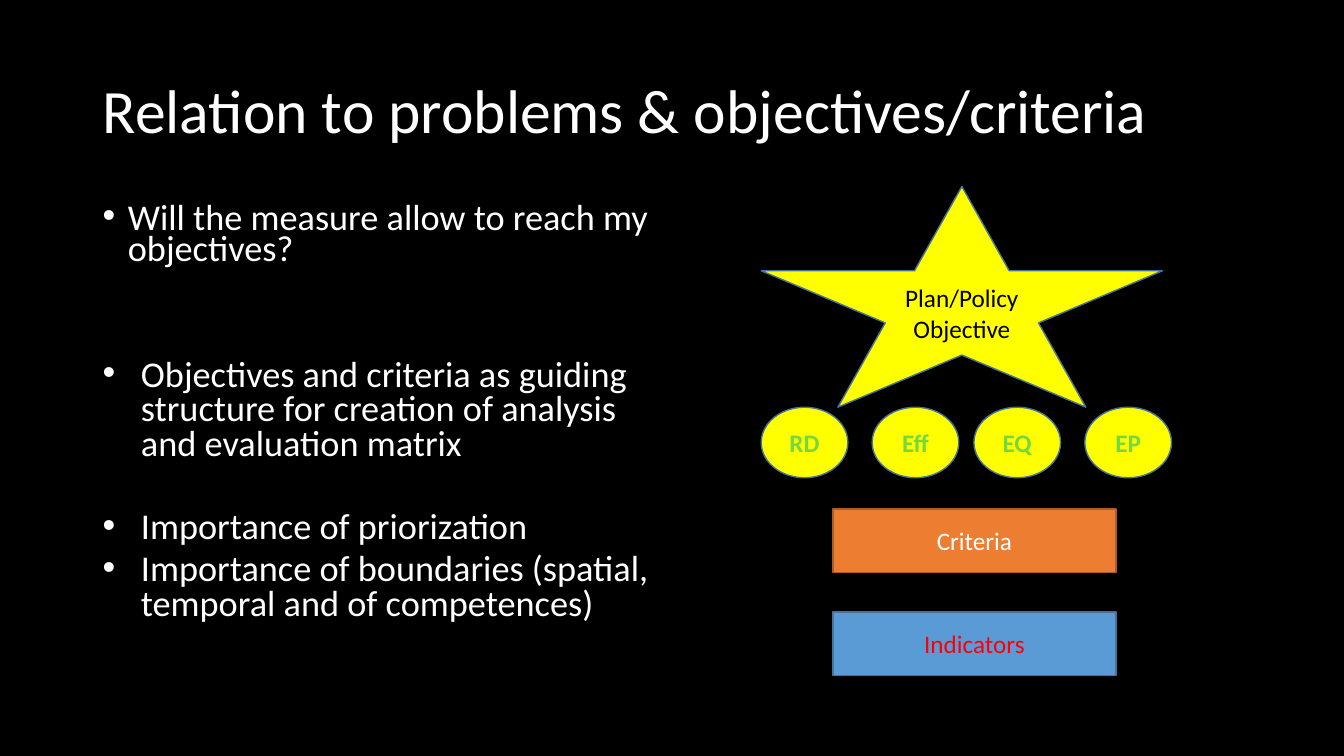
from lxml.etree import SubElement
from pptx import Presentation
from pptx.dml.color import RGBColor
from pptx.enum.shapes import MSO_SHAPE as Preset
from pptx.enum.text import MSO_ANCHOR as Anchor, MSO_AUTO_SIZE as AutoSize, PP_ALIGN as Align
from pptx.oxml.ns import qn
from pptx.util import Inches, Pt


def color(hex_string):
    return RGBColor.from_string(hex_string)


def add_text(paragraph, text, size, hex_string, bold=False):
    run = paragraph.add_run()
    run.text = text
    run.font.name = "Calibri"
    run.font.size = Pt(size)
    run.font.bold = bold
    run.font.color.rgb = color(hex_string)


presentation = Presentation()
presentation.slide_width = Inches(13.33)
presentation.slide_height = Inches(7.5)
slide = presentation.slides.add_slide(presentation.slide_layouts[5])
slide.background.fill.solid()
slide.background.fill.fore_color.rgb = color("000000")

title = slide.shapes.title
title.left, title.top, title.width, title.height = map(Inches, (0.92, 0.4, 11.5, 1.45))
title.text_frame.word_wrap = True
title.text_frame.auto_size = AutoSize.NONE
title.text_frame.vertical_anchor = Anchor.MIDDLE
heading = title.text_frame.paragraphs[0]
heading.alignment = Align.LEFT
heading.line_spacing = 0.9
add_text(heading, "Relation to problems & objectives/criteria", 44, "FFFFFF")

body = slide.shapes.add_textbox(*map(Inches, (0.92, 2, 5.67, 4.76))).text_frame
body.word_wrap = True
bullets = [
    ("Will the measure allow to reach my objectives?", 0.25, 0.7, 10),
    ("Objectives and criteria as guiding structure for creation of analysis and evaluation matrix",
     0.38, 0.8, 65.5),
    ("Importance of priorization", 0.38, 0.8, 34.5),
    ("Importance of boundaries (spatial, temporal and of competences)", 0.38, 0.8, 5),
]
for index, (text, indent, line_spacing, space_before) in enumerate(bullets):
    paragraph = body.add_paragraph() if index else body.paragraphs[0]
    paragraph.line_spacing = line_spacing
    paragraph.space_before = Pt(space_before)
    properties = paragraph._p.get_or_add_pPr()
    properties.set("marL", str(Inches(indent)))
    properties.set("indent", str(-Inches(indent)))
    SubElement(properties, qn("a:buFont"), typeface="Arial")
    SubElement(properties, qn("a:buChar"), char="•")
    add_text(paragraph, text, 25.9, "FFFFFF")

diagram = [
    (Preset.STAR_5_POINT, (7.55, 1.85, 3.98, 2.19), "FFFF00", "43739E",
     ["Plan/Policy", "Objective"], "000000"),
    (Preset.RECTANGLE, (8.26, 5.05, 2.81, 0.63), "ED7D31", "AF5C24", ["Criteria"], "FFFFFF"),
    (Preset.RECTANGLE, (8.26, 6.07, 2.81, 0.63), "5B9BD5", "43739E", ["Indicators"], "FF0000"),
]
for label, left in zip(["RD", "Eff", "EQ", "EP"], [7.55, 8.65, 9.66, 10.76]):
    diagram.append((Preset.OVAL, (left, 4.04, 0.86, 0.7), "FFFF00", "43739E", [label], "75D840"))

for preset, box, fill, line, labels, text_color in diagram:
    shape = slide.shapes.add_shape(preset, *map(Inches, box))
    shape.shadow.inherit = False
    shape.fill.solid()
    shape.fill.fore_color.rgb = color(fill)
    shape.line.color.rgb = color(line)
    shape.line.width = Pt(1)
    frame = shape.text_frame
    frame.word_wrap = True
    frame.vertical_anchor = Anchor.MIDDLE
    for index, label in enumerate(labels):
        paragraph = frame.add_paragraph() if index else frame.paragraphs[0]
        paragraph.alignment = Align.CENTER
        add_text(paragraph, label, 18, text_color, bold=preset == Preset.OVAL)

presentation.save("out.pptx")
